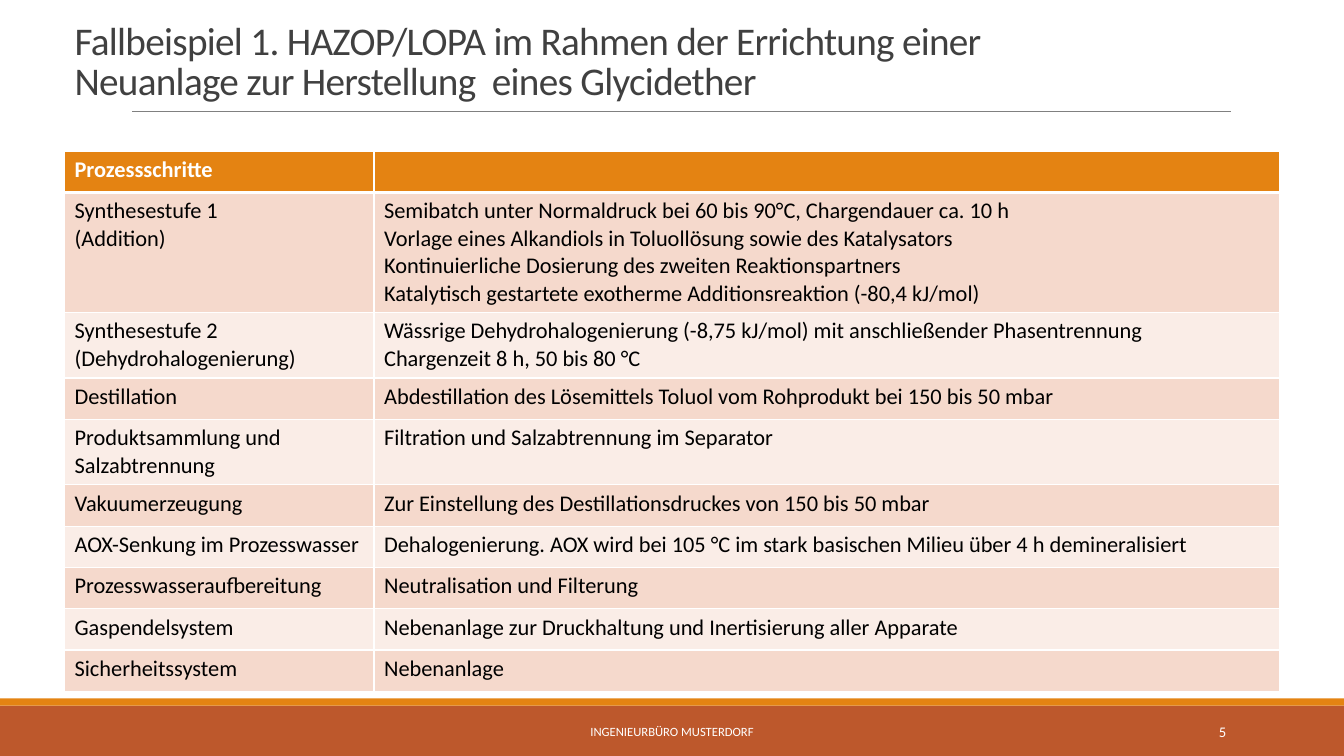
from lxml import etree
from pptx import Presentation
from pptx import util as u
from pptx.dml.color import RGBColor
from pptx.enum import shapes, text
from pptx.oxml import ns

WHITE = RGBColor(0xFF, 0xFF, 0xFF)
BLACK = RGBColor(0x00, 0x00, 0x00)
DARK_GREY = RGBColor(0x40, 0x40, 0x40)
RULE_GREY = RGBColor(0x80, 0x80, 0x80)
ORANGE = RGBColor(0xE4, 0x83, 0x12)
RUST = RGBColor(0xBD, 0x58, 0x2C)
ROW_DARK = RGBColor(0xF5, 0xD9, 0xCC)
ROW_LIGHT = RGBColor(0xFA, 0xED, 0xE7)
FONT = "Calibri"

TITLE = ("Fallbeispiel 1. HAZOP/LOPA im Rahmen der Errichtung einer\v"
         "Neuanlage zur Herstellung  eines Glycidether")
COLUMN_WIDTHS = [3.07, 8.98]
LINE_HEIGHTS = {1: 0.41, 2: 0.65, 4: 1.19}
STEPS = [
    ("Prozessschritte", "", 1),
    ("Synthesestufe 1\n(Addition)",
     "Semibatch unter Normaldruck bei 60 bis 90°C, Chargendauer ca. 10 h\n"
     "Vorlage eines Alkandiols in Toluollösung sowie des Katalysators\n"
     "Kontinuierliche Dosierung des zweiten Reaktionspartners\n"
     "Katalytisch gestartete exotherme Additionsreaktion (-80,4 kJ/mol)", 4),
    ("Synthesestufe 2\n(Dehydrohalogenierung)",
     "Wässrige Dehydrohalogenierung (-8,75 kJ/mol) mit anschließender Phasentrennung\n"
     "Chargenzeit 8 h, 50 bis 80 °C", 2),
    ("Destillation",
     "Abdestillation des Lösemittels Toluol vom Rohprodukt bei 150 bis 50 mbar", 1),
    ("Produktsammlung und Salzabtrennung", "Filtration und Salzabtrennung im Separator", 2),
    ("Vakuumerzeugung", "Zur Einstellung des Destillationsdruckes von 150 bis 50 mbar", 1),
    ("AOX-Senkung im Prozesswasser",
     "Dehalogenierung. AOX wird bei 105 °C im stark basischen Milieu über 4 h demineralisiert", 1),
    ("Prozesswasseraufbereitung", "Neutralisation und Filterung", 1),
    ("Gaspendelsystem", "Nebenanlage zur Druckhaltung und Inertisierung aller Apparate", 1),
    ("Sicherheitssystem", "Nebenanlage", 1),
]


def inches(*lengths):
    return [u.Inches(length) for length in lengths]


def style_text(frame, size, color, bold=False, align=text.PP_ALIGN.LEFT):
    for para in frame.paragraphs:
        para.alignment = align
        font = para.font
        font.name, font.size, font.bold = FONT, u.Pt(size), bold
        font.color.rgb = color


def add_band(page, left, top, width, height, color):
    band = page.shapes.add_shape(
        shapes.MSO_SHAPE.RECTANGLE, *inches(left, top, width, height))
    band.shadow.inherit = False
    band.fill.solid()
    band.fill.fore_color.rgb = color
    band.line.fill.background()


def add_label(page, left, top, width, height, words, size, align):
    label = page.shapes.add_textbox(*inches(left, top, width, height))
    frame = label.text_frame
    frame.word_wrap = True
    frame.vertical_anchor = text.MSO_ANCHOR.MIDDLE
    frame.text = words
    style_text(frame, size, WHITE, align=align)


def add_heading(page, left, top, width, height):
    title = page.shapes.title
    title.left, title.top, title.width, title.height = inches(left, top, width, height)
    frame = title.text_frame
    frame.text = TITLE
    frame.word_wrap = True
    frame.auto_size = text.MSO_AUTO_SIZE.NONE
    frame.vertical_anchor = text.MSO_ANCHOR.BOTTOM
    style_text(frame, 28, DARK_GREY)
    para = frame.paragraphs[0]
    para.line_spacing = 0.85
    for span in para.runs:
        span.font._element.set("spc", "-50")

    rule_top = top + height + 0.02
    rule = page.shapes.add_connector(
        shapes.MSO_CONNECTOR.STRAIGHT,
        *inches(left + 0.67, rule_top, left + width + 0.57, rule_top))
    rule.line.color.rgb = RULE_GREY
    rule.line.width = u.Pt(0.5)
    etree.SubElement(rule._element.spPr, ns.qn("a:effectLst"))


def set_borders(cell, top, bottom):
    properties = cell._tc.get_or_add_tcPr()
    widths = {"lnL": 1, "lnR": 1, "lnT": top, "lnB": bottom}
    for position, (side, width) in enumerate(widths.items()):
        border = etree.Element(ns.qn(f"a:{side}"), w=str(u.Pt(width)))
        fill = etree.SubElement(border, ns.qn("a:solidFill"))
        etree.SubElement(fill, ns.qn("a:srgbClr"), val=str(WHITE))
        properties.insert(position, border)


def add_steps(page, left, top):
    heights = [LINE_HEIGHTS[lines] for _, _, lines in STEPS]
    frame = page.shapes.add_table(
        len(STEPS), len(COLUMN_WIDTHS),
        *inches(left, top, sum(COLUMN_WIDTHS), sum(heights)))
    table = frame.table
    for column, width in zip(table.columns, COLUMN_WIDTHS):
        column.width = u.Inches(width)
    for index, (step, height) in enumerate(zip(STEPS, heights)):
        table.rows[index].height = u.Inches(height)
        header = index == 0
        color = ORANGE if header else ROW_DARK if index % 2 else ROW_LIGHT
        for cell, words in zip(table.rows[index].cells, step):
            cell.text = words
            style_text(cell.text_frame, 16, WHITE if header else BLACK, header)
            cell.fill.solid()
            cell.fill.fore_color.rgb = color
            set_borders(cell, 3 if index == 1 else 1, 3 if header else 1)


def add_footer(page, left, top, width, height):
    add_band(page, left, top + 0.07, width, height - 0.07, RUST)
    add_band(page, left, top, width, 0.07, ORANGE)
    label_top = top + 0.13
    add_label(page, left + 4.03, label_top, 5.27, 0.4,
              "INGENIEURBÜRO MUSTERDORF", 9, text.PP_ALIGN.CENTER)
    add_label(page, left + 10.83, label_top, 1.43, 0.4, "5", 10.5, text.PP_ALIGN.RIGHT)


def main():
    deck = Presentation()
    deck.slide_width, deck.slide_height = inches(13.33, 7.5)
    page = deck.slides.add_slide(deck.slide_layouts[5])
    add_footer(page, 0, 6.93, 13.33, 0.57)
    add_heading(page, 0.64, 0.31, 11, 0.77)
    add_steps(page, 0.64, 1.5)
    deck.save("out.pptx")


if __name__ == "__main__":
    main()
